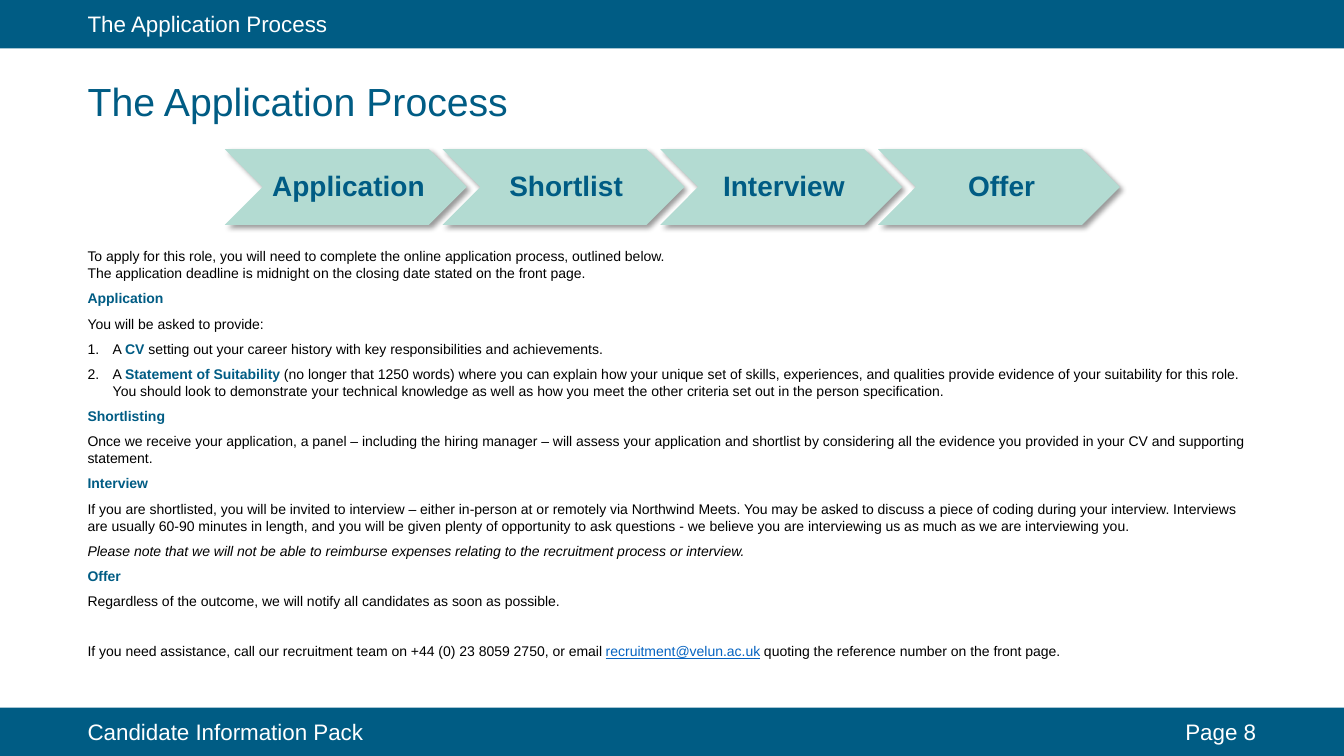
from dataclasses import dataclass

from lxml.etree import SubElement as Sub
from pptx import Presentation
from pptx.dml.color import RGBColor as Rgb
from pptx.enum.shapes import MSO_SHAPE as Shape
from pptx.enum.text import MSO_ANCHOR as Anchor, MSO_AUTO_SIZE as Auto, PP_ALIGN as Align
from pptx.oxml.ns import qn
from pptx.util import Inches, Pt


@dataclass(frozen=True)
class Theme:
    font: str = "Arial"
    navy: str = "005C84"
    mint: str = "B3DBD2"
    white: str = "FFFFFF"
    black: str = "000000"
    link: str = "0563C1"
    title: int = 28
    step: int = 20
    bar: int = 16
    body: int = 10


T = Theme()
WIDE, HIGH = Inches(13.333), Inches(7.5)

# Shared columns and rows, in percent of the slide
LEFT, SPAN = 5.78, 88.43
BAR, LINE = 6.4, 4.93

STEPS = ["Application", "Shortlist", "Interview", "Offer"]

# Body text: each paragraph is a list of (text, run format) and a paragraph format
BOLD = dict(bold=True, color=T.navy)
ITEM = dict(number=True)


def head(text):
    return [(text, BOLD)], {}


def plain(text, **form):
    return [(text, form)], {}


BODY = [
    plain("To apply for this role, you will need to complete the online application process, "
          "outlined below.\nThe application deadline is midnight on the closing date stated "
          "on the front page."),
    head("Application"),
    plain("You will be asked to provide:"),
    ([("A ", {}), ("CV", BOLD),
      (" setting out your career history with key responsibilities and achievements.", {})], ITEM),
    ([("A ", {}), ("Statement of Suitability ", BOLD),
      ("(no longer that 1250 words) where you can explain how your unique set of skills, "
       "experiences, and qualities provide evidence of your suitability for this role. You "
       "should look to demonstrate your technical knowledge as well as how you meet the other "
       "criteria set out in the person specification.", {})], ITEM),
    head("Shortlisting"),
    plain("Once we receive your application, a panel – including the hiring manager – will "
          "assess your application and shortlist by considering all the evidence you provided "
          "in your CV and supporting statement."),
    head("Interview"),
    plain("If you are shortlisted, you will be invited to interview – either in-person at or "
          "remotely via Northwind Meets. You may be asked to discuss a piece of coding during "
          "your interview. Interviews are usually 60-90 minutes in length, and you will be "
          "given plenty of opportunity to ask questions - we believe you are interviewing us "
          "as much as we are interviewing you."),
    plain("Please note that we will not be able to reimburse expenses relating to the "
          "recruitment process or interview.", italic=True),
    head("Offer"),
    plain("Regardless of the outcome, we will notify all candidates as soon as possible."),
    ([("If you need assistance, call our recruitment team on +44 (0) 23 8059 2750, or email ", {}),
      ("recruitment@velun.ac.uk", dict(color=T.link, under=True)),
      (" quoting the reference number on the front page.", {})], dict(before=17.5)),
]


def area(x, y, w, h):
    """Turn percent shares of the slide into lengths."""
    return [int(share * full / 100) for share, full in zip((x, y, w, h), (WIDE, HIGH) * 2)]


def write(para, text, size=T.body, color=T.black, bold=False, italic=False, under=False):
    """Add formatted text to a paragraph; a newline becomes a line break."""
    for i, part in enumerate(text.split("\n")):
        if i:
            para.add_line_break()
        run = para.add_run()
        run.text = part
        font = run.font
        font.name, font.size, font.color.rgb = T.font, Pt(size), Rgb.from_string(color)
        font.bold, font.italic, font.underline = bold, italic, under


def block(shapes, spot, wrap=True):
    """Add an empty text box and return its frame."""
    frame = shapes.add_textbox(*area(*spot)).text_frame
    frame.word_wrap = wrap
    return frame


def solid(shapes, kind, spot, color):
    shape = shapes.add_shape(kind, *area(*spot))
    shape.shadow.inherit = False
    shape.fill.solid()
    shape.fill.fore_color.rgb = Rgb.from_string(color)
    shape.line.fill.background()
    return shape


def shade(shape):
    """Give a shape a soft shadow to its lower right."""
    effects = shape.element.spPr.find(qn("a:effectLst"))
    outer = Sub(effects, qn("a:outerShdw"), blurRad=str(Pt(4)), dist=str(Pt(3)),
                dir="2700000", algn="tl", rotWithShape="0")
    tint = Sub(outer, qn("a:srgbClr"), val=T.black)
    Sub(tint, qn("a:alpha"), val="40000")


def label(shapes, text, x, y, w, align=Align.LEFT):
    """Add a white label on one of the bars."""
    frame = block(shapes, (x, y, w, LINE))
    para = frame.paragraphs[0]
    para.alignment = align
    write(para, text, size=T.bar, color=T.white)


def title(slide, text):
    shape = slide.shapes.title
    shape.left, shape.top, shape.width, shape.height = area(LEFT, 9.6, 33.15, 7.6)
    frame = shape.text_frame
    frame.word_wrap, frame.auto_size = False, Auto.SHAPE_TO_FIT_TEXT
    frame.vertical_anchor = Anchor.TOP
    frame.paragraphs[0].alignment = Align.LEFT
    write(frame.paragraphs[0], text, size=T.title, color=T.navy)


def step(shapes, text, x, y=19.73, w=18, h=10):
    """Add one chevron of the process with its caption."""
    shade(solid(shapes, Shape.CHEVRON, (x, y, w, h), T.mint))
    frame = block(shapes, (x + 2.78, y, 12.38, h))
    frame.vertical_anchor = Anchor.MIDDLE
    frame.margin_left = Inches(0.09)
    frame.margin_top = frame.margin_right = frame.margin_bottom = Inches(0.03)
    para = frame.paragraphs[0]
    para.alignment, para.line_spacing, para.space_after = Align.CENTER, 0.9, Pt(7)
    write(para, text, size=T.step, color=T.navy, bold=True)


def passage(frame, runs, first, number=False, before=0):
    """Add one body paragraph, numbered on request."""
    para = frame.paragraphs[0] if first else frame.add_paragraph()
    para.space_before, para.space_after = Pt(before), Pt(6)
    for text, form in runs:
        write(para, text, **form)
    if number:
        props = para._p.get_or_add_pPr()
        props.set("marL", str(Inches(0.25)))
        props.set("indent", str(-Inches(0.25)))
        Sub(props, qn("a:buFont"), typeface=T.font)
        Sub(props, qn("a:buAutoNum"), type="arabicPeriod")


def main():
    deck = Presentation()
    deck.slide_width, deck.slide_height = WIDE, HIGH
    slide = deck.slides.add_slide(deck.slide_layouts[5])
    shapes = slide.shapes

    # Title and the two bars
    title(slide, "The Application Process")
    for y in (0, 100 - BAR):
        solid(shapes, Shape.RECTANGLE, (0, y, 100, BAR), T.navy)
    label(shapes, "The Application Process", LEFT, 0.67, 24.6)
    label(shapes, "Candidate Information Pack", LEFT, 94.27, 24.6)
    label(shapes, "Page 8", 85.35, 94.27, 8.85, align=Align.RIGHT)

    # Body text
    frame = block(shapes, (LEFT, 32.13, SPAN, 60))
    for i, (runs, form) in enumerate(BODY):
        passage(frame, runs, first=i == 0, **form)

    # Process chevrons
    group = shapes.add_group_shape()
    for i, text in enumerate(STEPS):
        step(group.shapes, text, 16.73 + 16.2 * i)

    deck.save("out.pptx")


if __name__ == "__main__":
    main()
